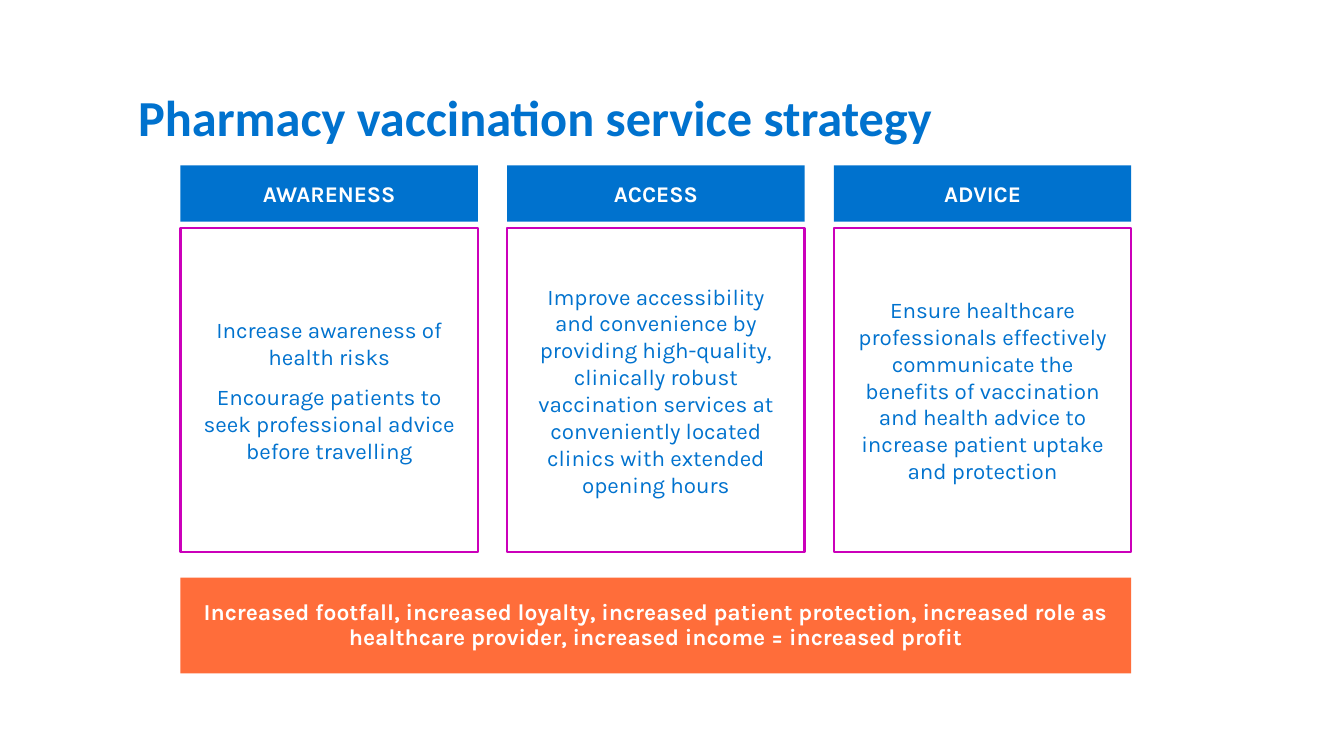
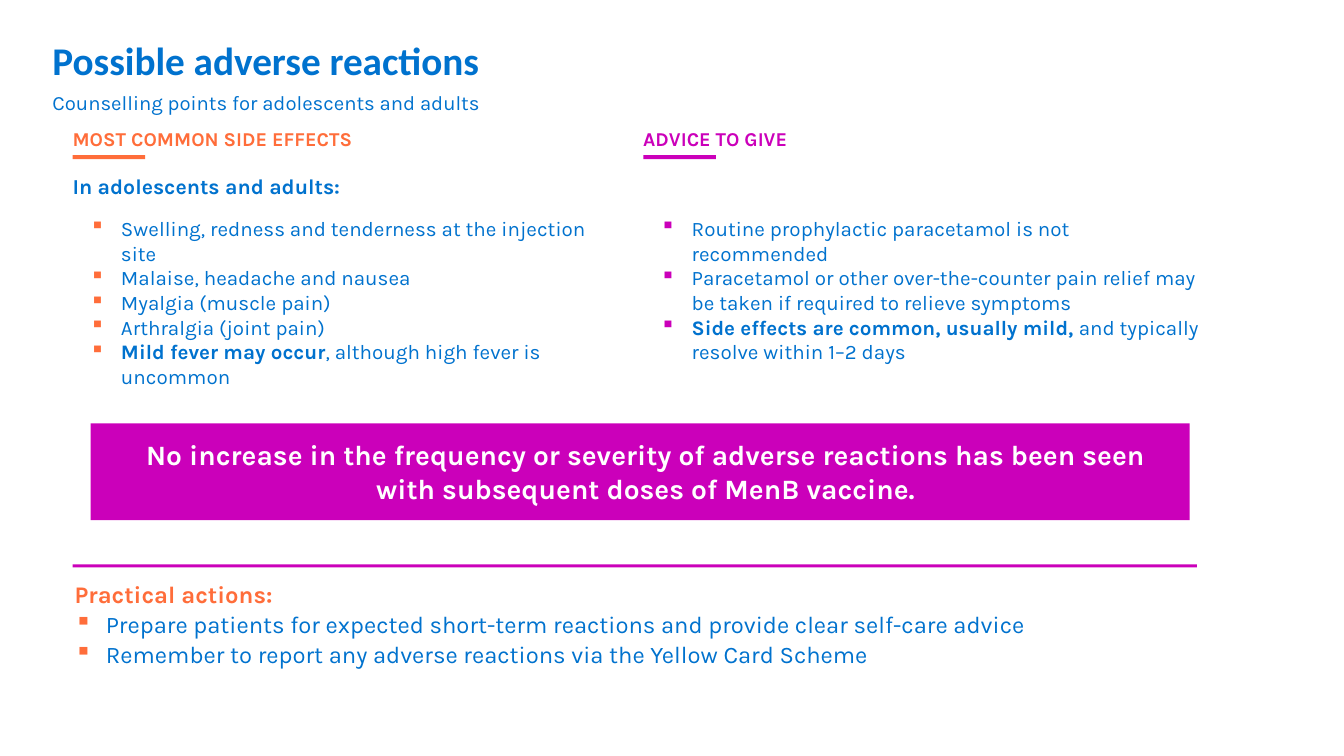
from dataclasses import dataclass

from lxml.etree import SubElement
from pptx import Presentation
from pptx.dml.color import RGBColor
from pptx.enum.shapes import MSO_SHAPE
from pptx.enum.text import MSO_ANCHOR, MSO_AUTO_SIZE, PP_ALIGN
from pptx.oxml.ns import qn
from pptx.util import Inches, Pt

BLUE, ORANGE, MAGENTA, WHITE = "0072CE", "FF6D3A", "CB00BA", "FFFFFF"
HEADING_FONT, BODY_FONT = "Calibri", "Karla"
DEFAULT_INSETS = (0.1, 0.05, 0.1, 0.05)
NO_INSETS = (0, 0, 0, 0)
CARD_INSETS = (0.18, 0.11, 0.18, 0.11)
CENTERED = {"alignment": PP_ALIGN.CENTER}


@dataclass
class Box:
    left: float
    top: float
    width: float
    height: float

    def inches(self):
        return [Inches(v) for v in (self.left, self.top, self.width, self.height)]

    def inner(self, dx, dy, width, height):
        return Box(self.left + dx, self.top + dy, width, height)


def paint(target, color):
    target.rgb = RGBColor.from_string(color)


def apply(target, formats):
    for name, value in formats.items():
        setattr(target, name, value)


def add_bullet(paragraph, color, margin):
    properties = paragraph._p.get_or_add_pPr()
    properties.set("marL", str(Inches(margin)))
    properties.set("indent", str(Inches(-0.31)))
    bullet_color = SubElement(properties, qn("a:buClr"))
    SubElement(bullet_color, qn("a:srgbClr")).set("val", color)
    SubElement(properties, qn("a:buChar")).set("char", "▪")


def write(frame, entries, size, color=BLUE, bold=False, font=BODY_FONT,
          insets=NO_INSETS, anchor=MSO_ANCHOR.TOP, layout=None, gap=0,
          bullet=None, margin=0.46):
    left, top, right, bottom = (Inches(v) for v in insets)
    apply(frame, {"word_wrap": True, "auto_size": MSO_AUTO_SIZE.NONE,
                  "vertical_anchor": anchor, "margin_left": left,
                  "margin_top": top, "margin_right": right,
                  "margin_bottom": bottom})
    for index, entry in enumerate(entries):
        paragraph = frame.paragraphs[0] if index == 0 else frame.add_paragraph()
        if bullet and not isinstance(entry, dict):
            add_bullet(paragraph, bullet, margin)
        apply(paragraph, {"alignment": PP_ALIGN.LEFT,
                          "space_before": Pt(gap if index else 0),
                          **(layout or {})})
        if isinstance(entry, dict):
            runs = [(entry["text"], True, entry["color"])]
        elif isinstance(entry, tuple):
            runs = [(entry[0], True, color), (entry[1], False, color)]
        else:
            runs = [(entry, bold, color)]
        for text, weight, tint in runs:
            run = paragraph.add_run()
            run.text = text
            apply(run.font, {"name": font, "size": Pt(size), "bold": weight})
            paint(run.font.color, tint)


def add_text(slide, box, entries, size, **style):
    write(slide.shapes.add_textbox(*box.inches()).text_frame, entries, size, **style)


def add_panel(slide, box, fill=None, outline=None):
    panel = slide.shapes.add_shape(MSO_SHAPE.RECTANGLE, *box.inches())
    panel.shadow.inherit = False
    if fill:
        panel.fill.solid()
        paint(panel.fill.fore_color, fill)
    else:
        panel.fill.background()
    if outline:
        paint(panel.line.color, outline)
        panel.line.width = Pt(1.5)
    else:
        panel.line.fill.background()
    return panel.text_frame


def add_title_slide(deck, box, title, size, **style):
    slide = deck.slides.add_slide(deck.slide_layouts[5])
    heading = slide.shapes.title
    apply(heading, dict(zip(("left", "top", "width", "height"), box.inches())))
    write(heading.text_frame, [title], size, bold=True, font=HEADING_FONT, **style)
    return slide


def add_pillar(slide, box, heading, points):
    write(add_panel(slide, box.inner(0, 0, box.width, 0.56), BLUE), [heading], 16,
          color=WHITE, bold=True, insets=CARD_INSETS, anchor=MSO_ANCHOR.MIDDLE,
          layout=CENTERED)
    card = box.inner(0, 0.62, box.width, box.height - 0.62)
    write(add_panel(slide, card, outline=MAGENTA), points, 16, gap=9.1,
          insets=CARD_INSETS, anchor=MSO_ANCHOR.MIDDLE, layout=CENTERED)


def add_advice_column(slide, box, heading, points, color, intro=None):
    add_text(slide, box.inner(0, 0, 3.3, 0.25), [heading], 14, color=color, bold=True)
    add_panel(slide, box.inner(0, 0.28, 0.72, 0.04), color)
    if intro:
        add_text(slide, box.inner(0, 0.46, 3.8, 0.3), [intro], 15.2, bold=True)
    add_text(slide, box.inner(0, 0.86, box.width, box.height - 0.86), points, 14.7,
             insets=(0.02,) * 4, bullet=color)


def add_actions(slide, box, heading, actions):
    add_panel(slide, box.inner(0, 0, box.width, 0.03), MAGENTA)
    add_text(slide, box.inner(0.02, 0.14, 10.9, box.height - 0.14),
             [{"text": heading, "color": ORANGE}, *actions], 17,
             layout={"line_spacing": 1.05}, bullet=ORANGE, margin=0.31)


def build_strategy(deck):
    slide = add_title_slide(deck, Box(1.27, 0.4, 11.15, 1.45),
                            "Pharmacy vaccination service strategy", 36,
                            insets=DEFAULT_INSETS, anchor=MSO_ANCHOR.MIDDLE,
                            layout={"line_spacing": 1.1})
    pillars = [
        ("AWARENESS", ["Increase awareness of health risks",
                       "Encourage patients to seek professional advice before travelling"]),
        ("ACCESS", ["Improve accessibility and convenience by providing high-quality, "
                    "clinically robust vaccination services at conveniently located "
                    "clinics with extended opening hours"]),
        ("ADVICE", ["Ensure healthcare professionals effectively communicate the "
                    "benefits of vaccination and health advice to increase patient "
                    "uptake and protection"]),
    ]
    area = Box(1.79, 1.64, 9.43, 3.84)
    pillar_width = 2.95
    step = (area.width - pillar_width) / (len(pillars) - 1)
    for index, (heading, points) in enumerate(pillars):
        add_pillar(slide, area.inner(index * step, 0, pillar_width, area.height),
                   heading, points)
    write(add_panel(slide, area.inner(0, 4.09, area.width, 0.95), ORANGE),
          ["Increased footfall, increased loyalty, increased patient protection, "
           "increased role as healthcare provider, increased income = increased profit"],
          16.3, color=WHITE, bold=True, insets=DEFAULT_INSETS,
          anchor=MSO_ANCHOR.MIDDLE, layout={**CENTERED, "line_spacing": 0.9})


def build_reactions(deck):
    slide = add_title_slide(deck, Box(0.52, 0.36, 11.85, 0.55),
                            "Possible adverse reactions", 28)
    add_text(slide, Box(0.52, 0.89, 10.9, 0.28),
             ["Counselling points for adolescents and adults"], 14.5)
    add_advice_column(slide, Box(0.72, 1.26, 5.15, 3.41), "MOST COMMON SIDE EFFECTS", [
        "Swelling, redness and tenderness at the injection site",
        "Malaise, headache and nausea",
        "Myalgia (muscle pain)",
        "Arthralgia (joint pain)",
        ("Mild fever may occur", ", although high fever is uncommon"),
    ], ORANGE, "In adolescents and adults:")
    add_advice_column(slide, Box(6.38, 1.26, 5.65, 2.91), "ADVICE TO GIVE", [
        "Routine prophylactic paracetamol is not recommended",
        "Paracetamol or other over-the-counter pain relief may be taken if required "
        "to relieve symptoms",
        ("Side effects are common, usually mild,", " and typically resolve within 1–2 days"),
    ], MAGENTA)
    write(add_panel(slide, Box(0.9, 4.2, 10.9, 0.96), MAGENTA),
          ["No increase in the frequency or severity of adverse reactions has been seen "
           "with subsequent doses of MenB vaccine."], 20, color=WHITE, bold=True,
          insets=(0.29, 0.14, 0.18, 0), layout=CENTERED)
    add_actions(slide, Box(0.72, 5.6, 11.15, 1.1), "Practical actions:", [
        "Prepare patients for expected short-term reactions and provide clear self-care advice",
        "Remember to report any adverse reactions via the Yellow Card Scheme",
    ])


def main():
    deck = Presentation()
    apply(deck, {"slide_width": Inches(13.33), "slide_height": Inches(7.5)})
    build_strategy(deck)
    build_reactions(deck)
    deck.save("out.pptx")


if __name__ == "__main__":
    main()
